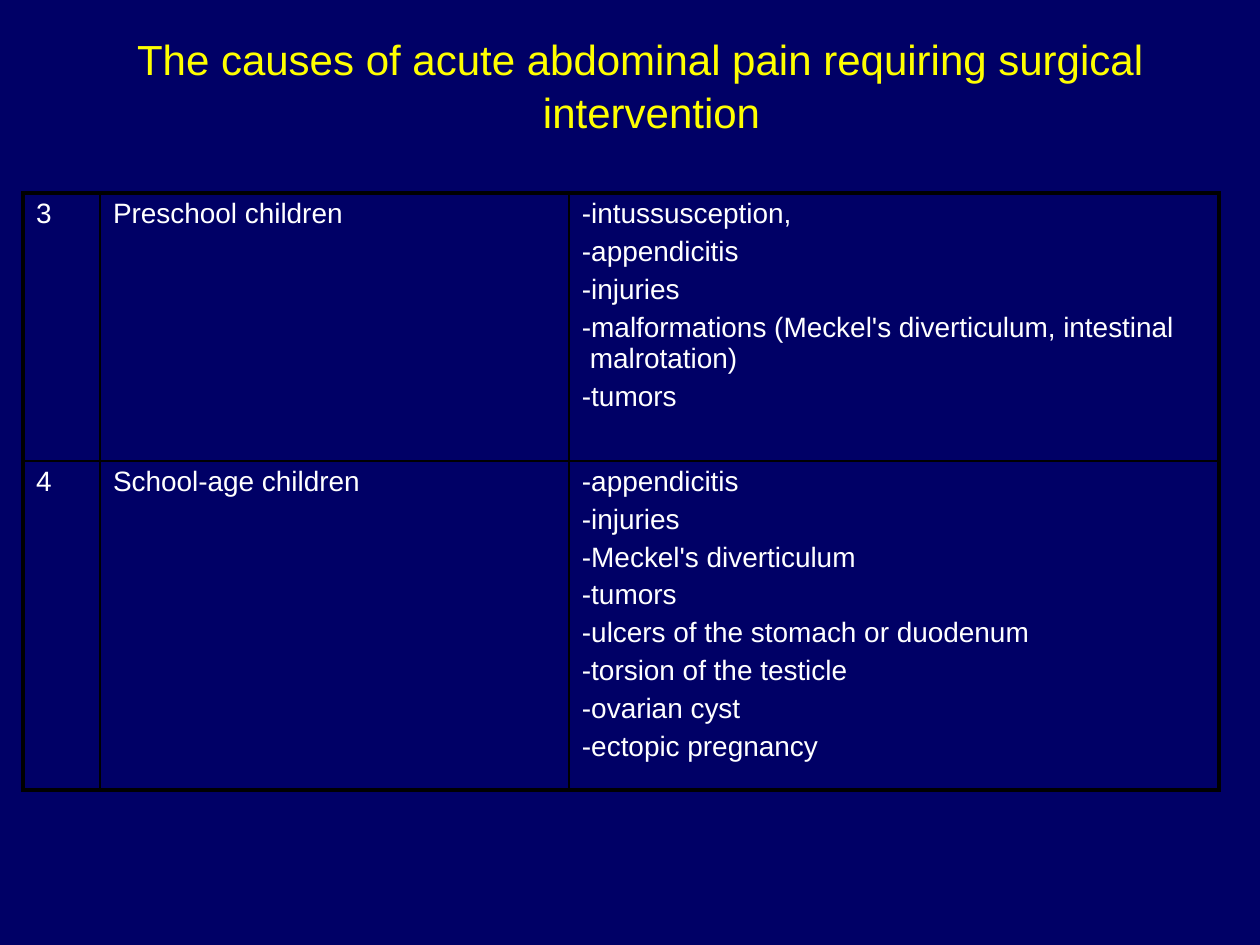
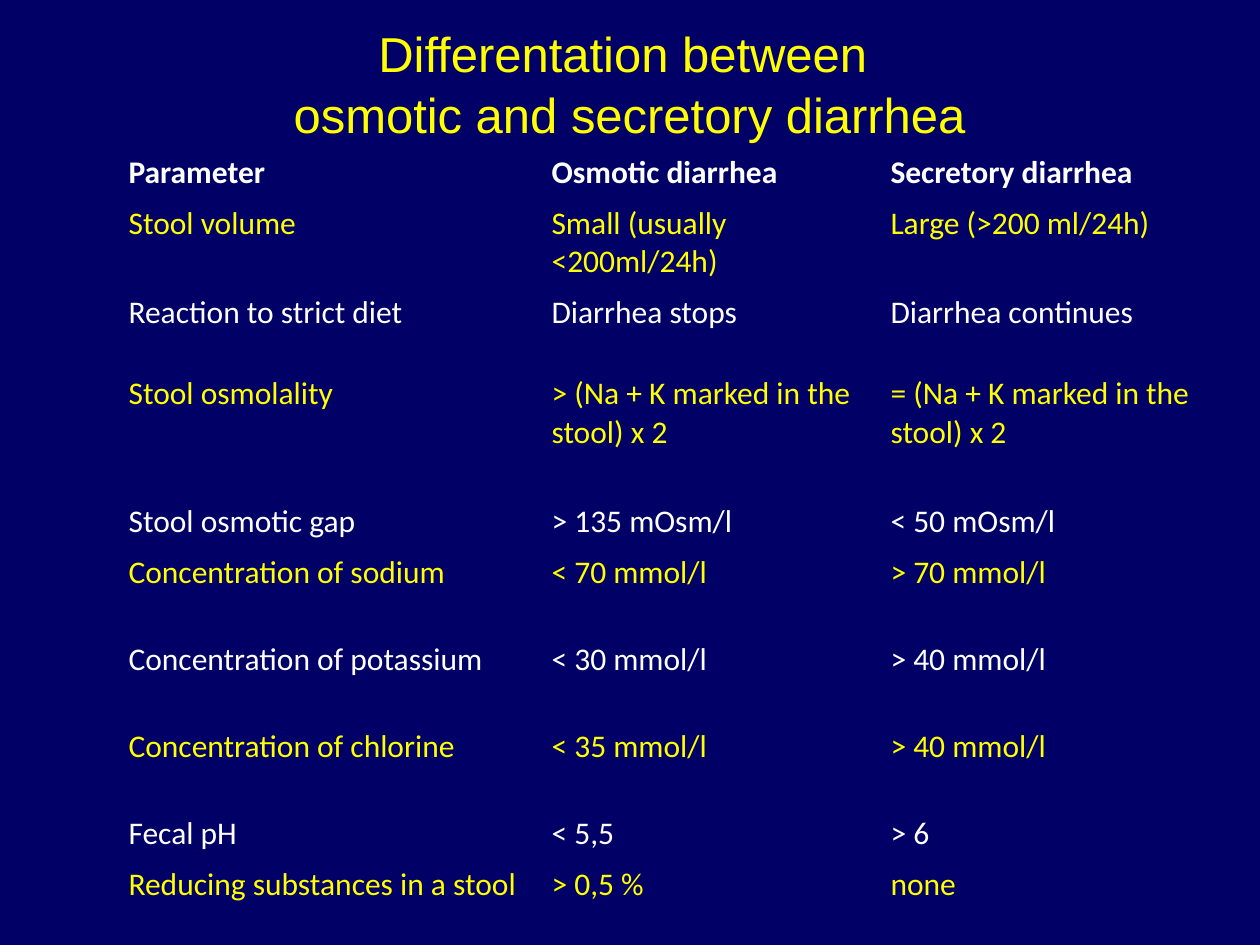
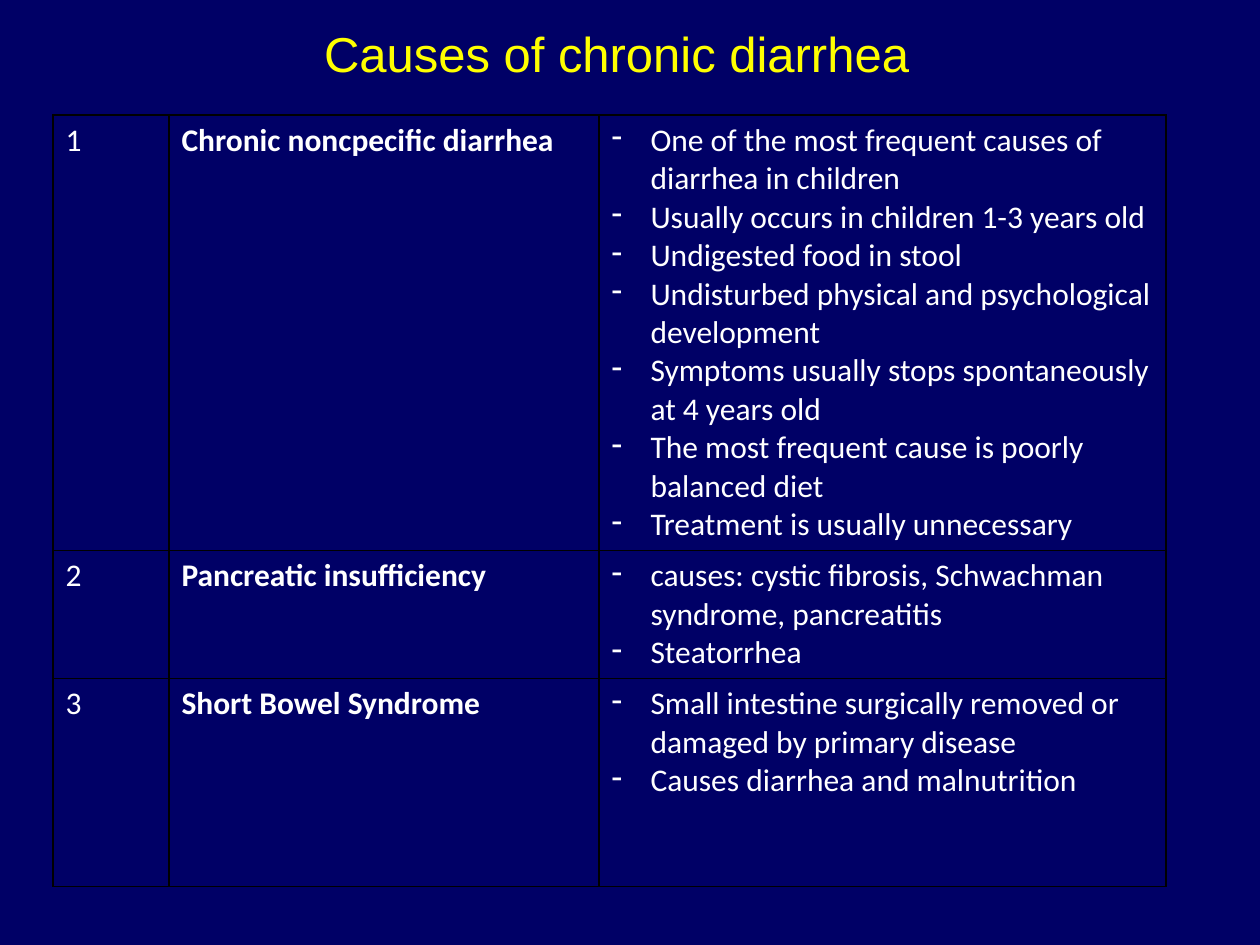
from dataclasses import dataclass, replace

from lxml import etree
from pptx import Presentation
from pptx import util as u
from pptx.dml.color import RGBColor
from pptx.enum import text
from pptx.oxml import ns

SCALE = 914400 / 126  # EMU in one px
NO_STYLE_TABLE = "{2D5ABB26-0587-4C30-8999-92F81FD0307C}"


def px(length):
    return u.Emu(round(length * SCALE))


@dataclass(frozen=True)
class Theme:
    navy: str = "000066"
    yellow: str = "FFFF00"
    white: str = "FFFFFF"
    black: str = "000000"
    title_font: str = "Arial"
    table_font: str = "Calibri"
    long_title_size: int = 24
    title_size: int = 28
    table_size: int = 18
    small_table_size: int = 16
    title_spacing: float = 1.04
    thin: float = 1
    thick: float = 2.25


@dataclass(frozen=True)
class TextStyle:
    font: str
    size: int
    color: str
    bold: bool = False
    left: int = 0
    first: int = 0
    bullet: str = ""
    before_first: float = 0
    before: float = 0


class Deck:
    """Holds the theme, the presentation and the current slide."""

    def __init__(self, theme):
        self.theme = theme
        self.presentation = Presentation()
        self.presentation.slide_width = px(1260)
        self.presentation.slide_height = px(945)
        fill = self.presentation.slide_master.background.fill
        fill.solid()
        fill.fore_color.rgb = RGBColor.from_string(theme.navy)
        self.slide = None

    def add_slide(self):
        layout = self.presentation.slide_layouts[5]
        self.slide = self.presentation.slides.add_slide(layout)

    def add_text(self, frame, lines, style):
        for index, line in enumerate(lines):
            paragraph = frame.add_paragraph() if index else frame.paragraphs[0]
            paragraph.space_before = u.Pt(style.before if index else style.before_first)
            properties = paragraph._p.get_or_add_pPr()
            properties.set("marL", str(px(style.left)))
            properties.set("indent", str(px(style.first)))
            if style.bullet:
                bullet = etree.SubElement(properties, ns.qn("a:buChar"))
                bullet.set("char", style.bullet)
            for number, part in enumerate(line.split("\n")):
                if number:
                    paragraph.add_line_break()
                run = paragraph.add_run()
                run.text = part
                run.font.name = style.font
                run.font.size = u.Pt(style.size)
                run.font.bold = style.bold
                run.font.color.rgb = RGBColor.from_string(style.color)

    def title(self, words, box, size=None, align=text.PP_ALIGN.CENTER, left=0, first=0):
        shape = self.slide.shapes.title
        shape.left, shape.top, shape.width, shape.height = map(px, box)
        frame = shape.text_frame
        frame.margin_left = frame.margin_right = frame.margin_top = frame.margin_bottom = 0
        frame.word_wrap = True
        frame.auto_size = text.MSO_AUTO_SIZE.NONE
        frame.vertical_anchor = text.MSO_ANCHOR.TOP
        style = TextStyle(self.theme.title_font, size or self.theme.title_size,
                          self.theme.yellow, left=left, first=first)
        self.add_text(frame, [words], style)
        paragraph = frame.paragraphs[0]
        paragraph.alignment = align
        paragraph.line_spacing = self.theme.title_spacing

    def borders(self, cell, widths):
        """Draw the left, right, top and bottom borders, in points."""
        properties = cell._tc.get_or_add_tcPr()
        for side, width in zip("LRTB", widths):
            line = etree.SubElement(properties, ns.qn(f"a:ln{side}"), w=str(u.Pt(width)))
            fill = etree.SubElement(line, ns.qn("a:solidFill"))
            etree.SubElement(fill, ns.qn("a:srgbClr"), val=self.theme.black)

    def table(self, rows, style_at, corner, widths, heights,
              outer=0, inner=0, fill=None, margins=None):
        """Each cell is a string or a list of paragraphs; style_at(row, column) styles it."""
        frame = self.slide.shapes.add_table(
            len(rows), len(widths), px(corner[0]), px(corner[1]),
            px(sum(widths)), px(sum(heights)))
        table = frame.table
        table.first_row = table.horz_banding = False
        table._tbl.tblPr.find(ns.qn("a:tableStyleId")).text = NO_STYLE_TABLE
        for column, width in zip(table.columns, widths):
            column.width = px(width)
        for row, height in zip(table.rows, heights):
            row.height = px(height)
        last_row, last_column = len(rows) - 1, len(widths) - 1
        for r, row in enumerate(rows):
            for c, content in enumerate(row):
                cell = table.cell(r, c)
                if margins:
                    (cell.margin_left, cell.margin_top,
                     cell.margin_right, cell.margin_bottom) = map(px, margins)
                if outer:
                    edges = (c == 0, c == last_column, r == 0, r == last_row)
                    self.borders(cell, [outer if edge else inner for edge in edges])
                if fill:
                    cell.fill.solid()
                    cell.fill.fore_color.rgb = RGBColor.from_string(fill)
                else:
                    cell.fill.background()
                lines = [content] if isinstance(content, str) else content
                self.add_text(cell.text_frame, lines, style_at(r, c))


def surgical_causes(deck):
    theme = deck.theme
    deck.add_slide()
    deck.title("The causes of acute abdominal pain requiring surgical intervention",
               (135, 32, 1011, 105), theme.long_title_size,
               text.PP_ALIGN.LEFT, left=408, first=-406)
    rows = [
        ["3", "Preschool children", [
            "-intussusception,",
            "-appendicitis",
            "-injuries",
            "-malformations (Meckel's diverticulum, intestinal malrotation)",
            "-tumors"]],
        ["4", "School-age children", [
            "-appendicitis",
            "-injuries",
            "-Meckel's diverticulum",
            "-tumors",
            "-ulcers of the stomach or duodenum",
            "-torsion of the testicle",
            "-ovarian cyst",
            "-ectopic pregnancy"]],
    ]
    style = TextStyle(theme.title_font, theme.small_table_size, theme.white,
                      left=21, first=-8, before_first=3.2, before=3.9)
    deck.table(rows, lambda r, c: style, (23, 193), (77, 469, 650), (268, 329),
               outer=theme.thick, inner=theme.thin, fill=theme.navy, margins=(0, 5, 0, 0))


def diarrhea_types(deck):
    theme = deck.theme
    deck.add_slide()
    deck.title("Differentation between \nosmotic and secretory diarrhea", (223, 21, 813, 118))
    rows = [
        ["Parameter", "Osmotic diarrhea", "Secretory diarrhea"],
        ["Stool volume", "Small (usually <200ml/24h)", "Large (>200 ml/24h)"],
        ["Reaction to strict diet", "Diarrhea stops", "Diarrhea continues"],
        ["Stool osmolality", "> (Na + K marked in the stool) x 2",
         "= (Na + K marked in the stool) x 2"],
        ["Stool osmotic gap", "> 135 mOsm/l", "< 50 mOsm/l"],
        ["Concentration of sodium", "< 70 mmol/l", "> 70 mmol/l"],
        ["Concentration of potassium", "< 30 mmol/l", "> 40 mmol/l"],
        ["Concentration of chlorine", "< 35 mmol/l", "> 40 mmol/l"],
        ["Fecal pH", "< 5,5", "> 6"],
        ["Reducing substances in a stool", "> 0,5 %", "none"],
    ]

    def style_at(r, c):
        color = theme.yellow if r % 2 else theme.white
        return TextStyle(theme.table_font, theme.table_size, color, bold=r == 0)

    deck.table(rows, style_at, (116, 147), (423, 339, 339),
               (51, 89, 81, 128, 51, 87, 87, 87, 51, 106))


def chronic_causes(deck):
    theme = deck.theme
    deck.add_slide()
    deck.title("Causes of chronic diarrhea", (210, 21, 813, 59))
    rows = [
        ["1", "Chronic noncpecific diarrhea", [
            "One of the most frequent causes of diarrhea in children",
            "Usually occurs in children 1-3 years old",
            "Undigested food in stool",
            "Undisturbed physical and psychological development",
            "Symptoms usually stops spontaneously at 4 years old",
            "The most frequent cause is poorly balanced diet",
            "Treatment is usually unnecessary"]],
        ["2", "Pancreatic insufficiency", [
            "causes: cystic fibrosis, Schwachman syndrome, pancreatitis",
            "Steatorrhea"]],
        ["3", "Short Bowel Syndrome", [
            "Small intestine surgically removed or damaged by primary disease",
            "Causes diarrhea and malnutrition"]],
    ]
    plain = TextStyle(theme.table_font, theme.table_size, theme.white)
    columns = [plain, replace(plain, bold=True),
               replace(plain, left=39, first=-39, bullet="-")]
    deck.table(rows, lambda r, c: columns[c], (53, 115), (116, 430, 567),
               (411, 123, 208), outer=theme.thin, inner=theme.thin)


def main():
    deck = Deck(Theme())
    surgical_causes(deck)
    diarrhea_types(deck)
    chronic_causes(deck)
    deck.presentation.save("out.pptx")


if __name__ == "__main__":
    main()
